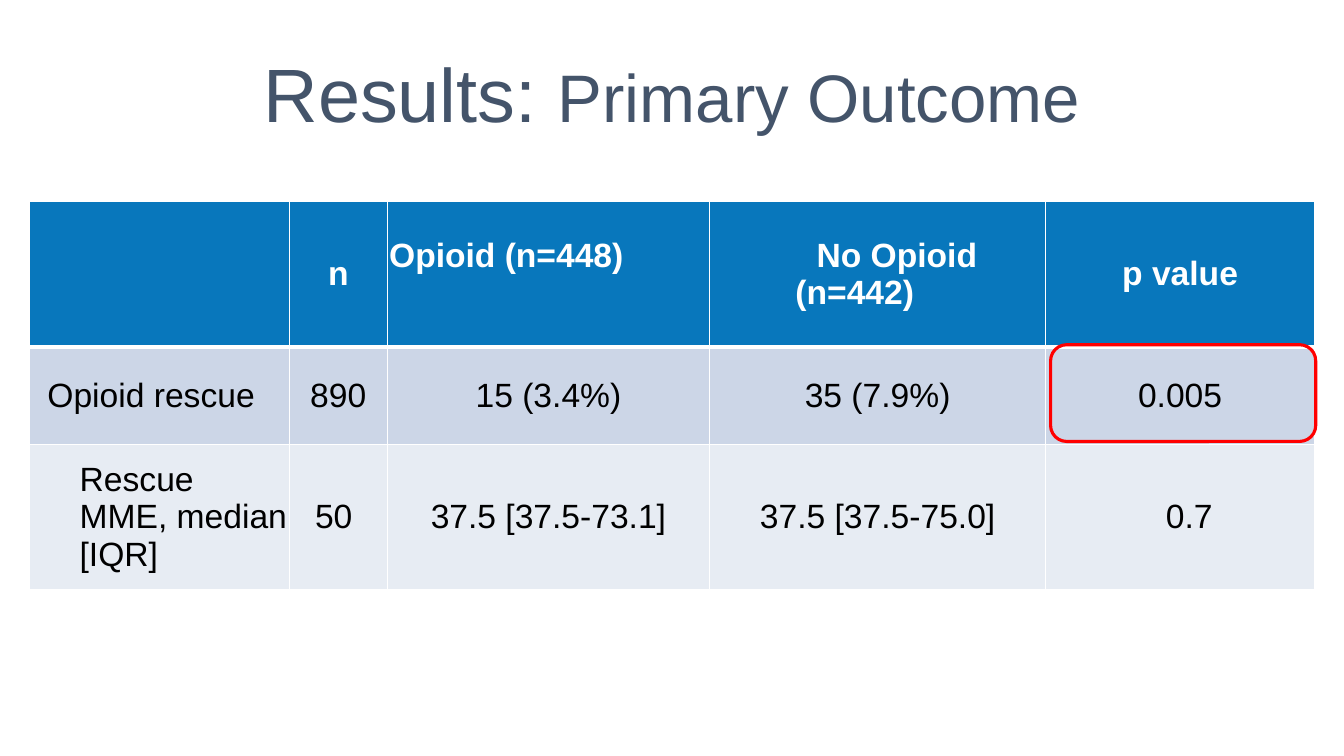
from pptx import Presentation
from pptx.dml.color import RGBColor
from pptx.enum import shapes, text
from pptx.oxml import parse_xml
from pptx.oxml.ns import nsdecls
from pptx.util import Inches, Pt

HEX = {"title": "44546A", "head": "0877BC", "band": "CCD6E7", "pale": "E7ECF3",
       "white": "FFFFFF", "black": "000000", "mark": "FF0000"}
MID = text.MSO_ANCHOR.MIDDLE
LEFT, MIDDLE = text.PP_ALIGN.LEFT, text.PP_ALIGN.CENTER


def add_run(para, words, size, color, bold=False):
    run = para.add_run()
    run.text = words
    run.font.name = "Arial"
    run.font.size = Pt(size)
    run.font.bold = bold
    run.font.color.rgb = RGBColor.from_string(HEX[color])


def add_edges(cell, low):
    """Draw white cell borders; low is the bottom width in points."""
    props = cell._tc.get_or_add_tcPr()
    for spot, side in enumerate("LRTB"):
        wide = Pt(low if side == "B" else 1)
        props.insert(spot, parse_xml(
            f'<a:ln{side} {nsdecls("a")} w="{wide}"><a:solidFill>'
            f'<a:srgbClr val="{HEX["white"]}"/></a:solidFill></a:ln{side}>'))


deck = Presentation()
deck.slide_width, deck.slide_height = Inches(13.33), Inches(7.5)
slide = deck.slides.add_slide(deck.slide_layouts[6])

# Title
box = slide.shapes.add_textbox(Inches(0), Inches(0.25), Inches(13.33), Inches(1.45))
frame = box.text_frame
frame.word_wrap = True
frame.vertical_anchor = MID
para = frame.paragraphs[0]
para.alignment = MIDDLE
para.line_spacing = 0.9
add_run(para, "Results: ", 54, "title")
add_run(para, "Primary Outcome", 48, "title")

# Outcome table
rows = [
    ["", "n", "Opioid (n=448)", "No Opioid (n=442)", "p value"],
    ["Opioid rescue", "890", "15 (3.4%)", "35 (7.9%)", "0.005"],
    ["Rescue MME, median [IQR]", "50", "37.5 [37.5-73.1]", "37.5 [37.5-75.0]", "0.7"],
]
wides = [2.58, 0.97, 3.2, 3.33, 2.67]
highs = [1.44, 0.97, 1.44]
fills = ["head", "band", "pale"]
# Left, right and bottom margins of the cells that are set off centre
pads = {(0, 2): (0.02, 0, 0.36), (1, 0): (0.18, 0, 0),
        (2, 1): (0, 0.09, 0), (2, 4): (0.18, 0, 0)}
# Left margin and first-line indent
dents = {(0, 3): (0.85, 0.21), (2, 0): (0.5, 0)}
lefts = [(0, 2), (0, 3), (1, 0), (2, 0)]

grid = slide.shapes.add_table(3, 5, Inches(0.29), Inches(2),
                              Inches(sum(wides)), Inches(sum(highs))).table
for col, wide in zip(grid.columns, wides):
    col.width = Inches(wide)
for r, row in enumerate(rows):
    grid.rows[r].height = Inches(highs[r])
    head = r == 0
    for c, words in enumerate(row):
        cell = grid.cell(r, c)
        cell.fill.solid()
        cell.fill.fore_color.rgb = RGBColor.from_string(HEX[fills[r]])
        add_edges(cell, 3 if head else 1)
        cell.vertical_anchor = MID
        left, right, low = pads.get((r, c), (0, 0, 0))
        cell.margin_left, cell.margin_right = Inches(left), Inches(right)
        cell.margin_top, cell.margin_bottom = Inches(0), Inches(low)
        para = cell.text_frame.paragraphs[0]
        para.alignment = LEFT if (r, c) in lefts else MIDDLE
        if (r, c) in dents:
            margin, first = dents[r, c]
            props = para._p.get_or_add_pPr()
            props.set("marL", str(Inches(margin)))
            props.set("indent", str(Inches(first)))
        if words:
            add_run(para, words, 24, "white" if head else "black", head)

# Ring around the significant p value
ring = slide.shapes.add_shape(shapes.MSO_SHAPE.ROUNDED_RECTANGLE,
                              Inches(10.42), Inches(3.42), Inches(2.63), Inches(0.96))
ring.shadow.inherit = False
ring.fill.background()
ring.line.color.rgb = RGBColor.from_string(HEX["mark"])
ring.line.width = Pt(2.25)

deck.save("out.pptx")
